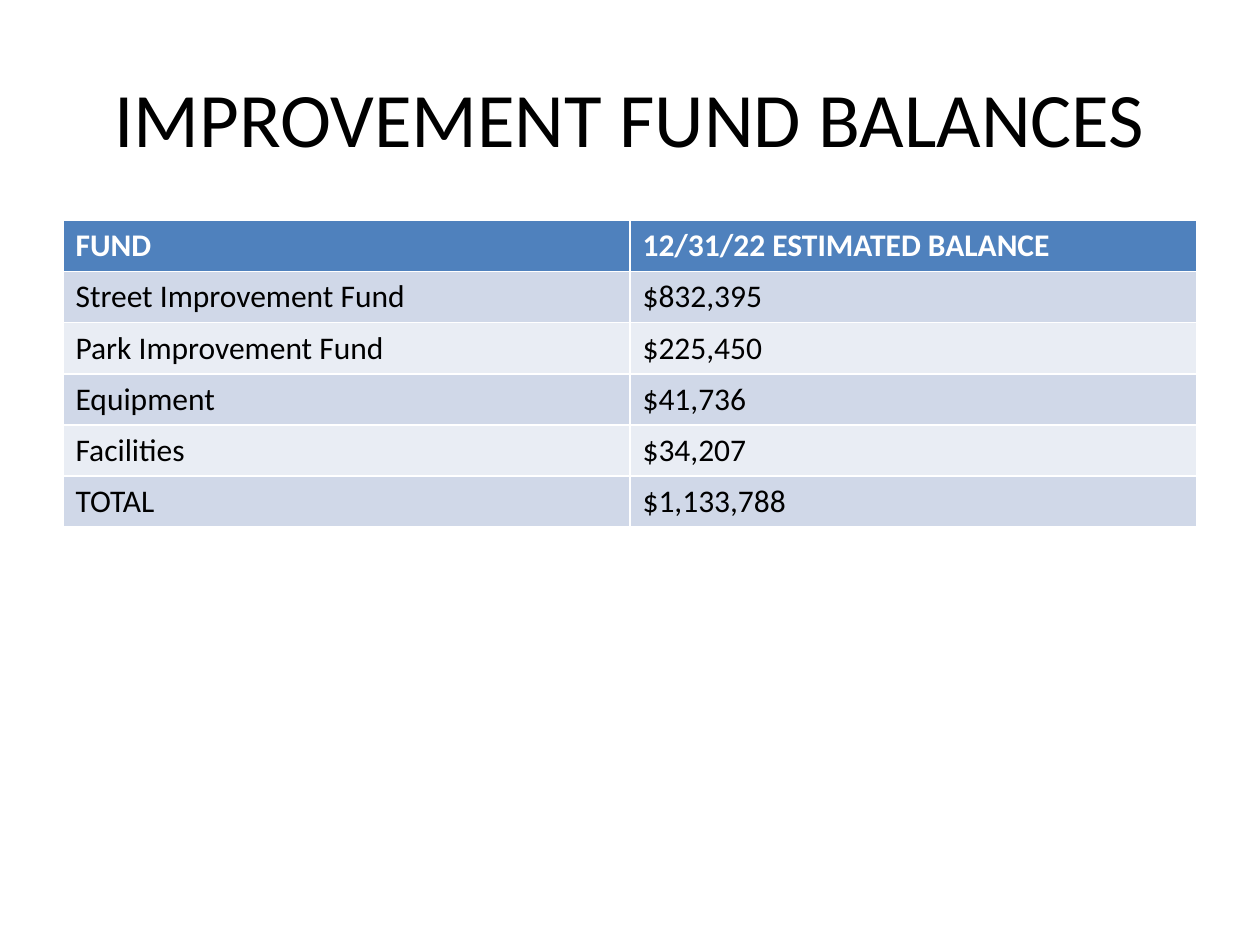
from pptx import Presentation
from pptx.dml.color import RGBColor as RGB
from pptx.enum.text import MSO_ANCHOR as Anchor, PP_ALIGN as Align
from pptx.util import Pt

BLACK = RGB(0x00, 0x00, 0x00)
WHITE = RGB(0xFF, 0xFF, 0xFF)
BLUE = RGB(0x4F, 0x81, 0xBD)
BANDS = RGB(0xE9, 0xED, 0xF4), RGB(0xD0, 0xD8, 0xE8)

FUNDS = [
    ("FUND", "12/31/22 ESTIMATED BALANCE"),
    ("Street Improvement Fund", "$832,395"),
    ("Park Improvement Fund", "$225,450"),
    ("Equipment", "$41,736"),
    ("Facilities", "$34,207"),
    ("TOTAL", "$1,133,788"),
]


def style(para, size, color, bold=False):
    font = para.font
    font.name = "Calibri"
    font.size = Pt(size)
    font.bold = bold
    font.color.rgb = color


def add_title(slide, box, text):
    frame = slide.shapes.add_textbox(*map(Pt, box)).text_frame
    frame.word_wrap = True
    frame.vertical_anchor = Anchor.MIDDLE
    para = frame.paragraphs[0]
    para.text = text
    para.alignment = Align.CENTER
    style(para, 44, BLACK)


def add_funds(slide, box, rows):
    """Fill the box with a table; the default table style draws its white rules."""
    table = slide.shapes.add_table(len(rows), len(rows[0]), *map(Pt, box)).table
    for r, row in enumerate(rows):
        head = r == 0
        for c, text in enumerate(row):
            cell = table.cell(r, c)
            cell.text = text
            cell.fill.solid()
            cell.fill.fore_color.rgb = BLUE if head else BANDS[r % 2]
            style(cell.text_frame.paragraphs[0], 18, WHITE if head else BLACK, head)


def main():
    deck = Presentation()
    deck.slide_width, deck.slide_height = Pt(720), Pt(540)
    slide = deck.slides.add_slide(deck.slide_layouts[6])
    add_title(slide, (36, 21.6, 648, 90), "IMPROVEMENT FUND BALANCES")
    add_funds(slide, (36, 126, 648, 175.2), FUNDS)
    deck.save("out.pptx")


if __name__ == "__main__":
    main()
